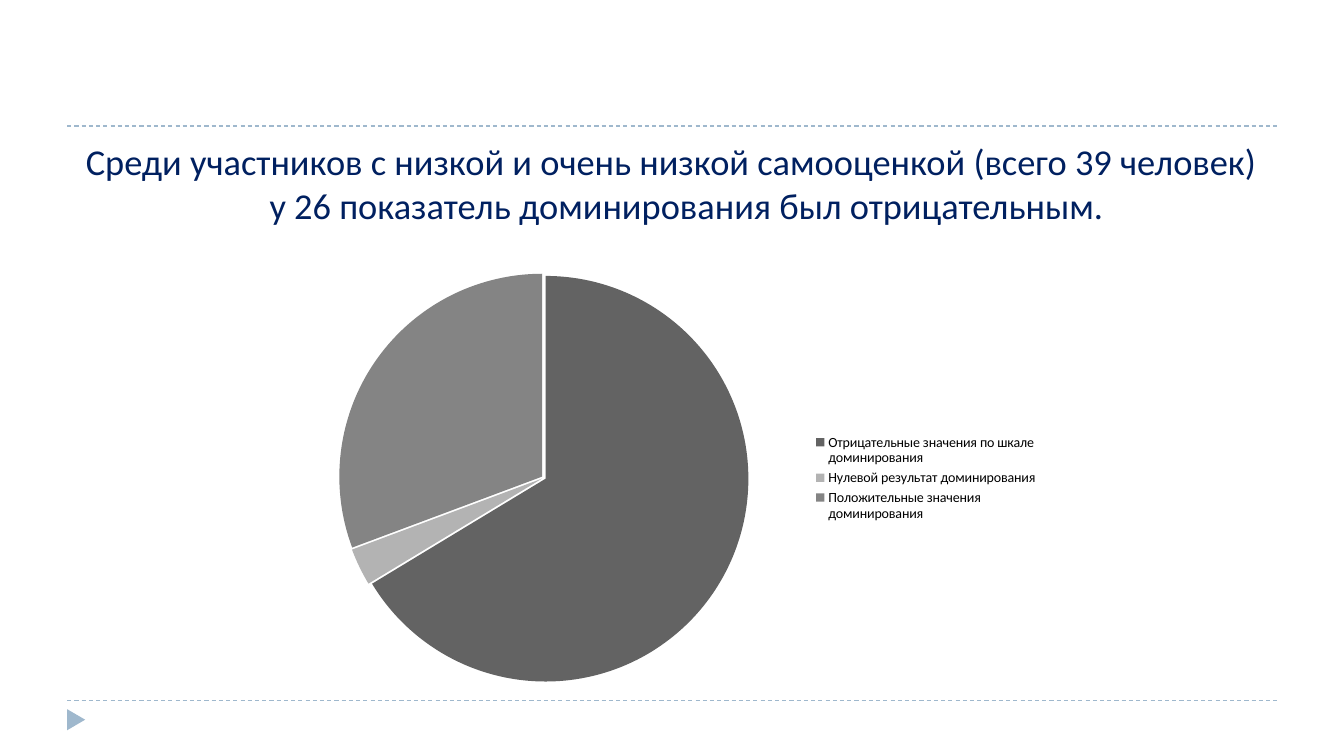
from dataclasses import dataclass

from lxml import etree
from pptx import Presentation
from pptx.chart.data import CategoryChartData
from pptx.dml.color import RGBColor
from pptx.enum.chart import XL_CHART_TYPE as ChartType, XL_LEGEND_POSITION as LegendPos
from pptx.enum.dml import MSO_LINE_DASH_STYLE as Dash
from pptx.enum.shapes import MSO_CONNECTOR as Connector, MSO_SHAPE as Shape
from pptx.enum.text import MSO_ANCHOR as Anchor, MSO_AUTO_SIZE as AutoSize, PP_ALIGN as Align
from pptx.oxml.ns import qn
from pptx.slide import Slide
from pptx.util import Pt

FONT = "Calibri"
ACCENT = "9FB8CD"
MARGIN, CONTENT_WIDTH = 48, 864
RULE_TOPS = (90, 500.4)
TITLE = ("Среди участников с низкой и очень низкой самооценкой (всего 39 человек) "
         "у 26 показатель доминирования был отрицательным.")


@dataclass
class Slice:
    label: str
    value: int
    color: str


SLICES = [
    Slice("Отрицательные значения по шкале доминирования", 67, "636363"),
    Slice("Нулевой результат доминирования", 3, "B3B3B3"),
    Slice("Положительные значения доминирования", 31, "848484"),
]


def rgb(value: str) -> RGBColor:
    return RGBColor.from_string(value)


def format_font(font, size: float, color: str) -> None:
    for name, value in {"name": FONT, "size": Pt(size), "bold": False}.items():
        setattr(font, name, value)
    font.color.rgb = rgb(color)


def add_rule(s: Slide, top: float) -> None:
    line = s.shapes.add_connector(Connector.STRAIGHT, Pt(MARGIN), Pt(top),
                                  Pt(MARGIN + CONTENT_WIDTH), Pt(top))
    line.line.color.rgb = rgb(ACCENT)
    line.line.width = Pt(0.75)
    line.line.dash_style = Dash.DASH
    etree.SubElement(line._element.spPr, qn("a:effectLst"))


def add_marker(s: Slide) -> None:
    sp = s.shapes.add_shape(Shape.ISOSCELES_TRIANGLE, Pt(46.8), Pt(507.6), Pt(15.12), Pt(12.96))
    sp.rotation = 90
    sp.shadow.inherit = False
    sp.fill.solid()
    sp.fill.fore_color.rgb = rgb(ACCENT)
    sp.line.fill.background()


def set_title(s: Slide) -> None:
    sp = s.shapes.title
    box = {"left": MARGIN, "top": 95.76, "width": CONTENT_WIDTH, "height": 80}
    for name, value in box.items():
        setattr(sp, name, Pt(value))
    tf = sp.text_frame
    frame = {"word_wrap": True, "auto_size": AutoSize.NONE, "vertical_anchor": Anchor.TOP}
    for name, value in frame.items():
        setattr(tf, name, value)
    p = tf.paragraphs[0]
    p.alignment = Align.CENTER
    pPr = p._p.get_or_add_pPr()
    pPr.set("marL", str(Pt(21.6)))
    pPr.set("indent", str(Pt(-21.6)))
    r = p.add_run()
    r.text = TITLE
    format_font(r.font, 26, "002060")


def add_pie(s: Slide) -> None:
    data = CategoryChartData()
    data.categories = [part.label for part in SLICES]
    data.add_series("Series 1", [part.value for part in SLICES])
    chart = s.shapes.add_chart(ChartType.PIE, Pt(197.28), Pt(185.04),
                               Pt(551.52), Pt(312.48), data).chart
    format_font(chart.font, 10, "000000")
    chart.has_title = False
    chart.has_legend = True
    chart.legend.position = LegendPos.RIGHT
    chart.legend.include_in_layout = False
    plot = chart.plots[0]
    plot.vary_by_categories = True
    series = plot.series[0]
    for i, part in enumerate(SLICES):
        fill = series.points[i].format.fill
        fill.solid()
        fill.fore_color.rgb = rgb(part.color)
    explosion = etree.Element(qn("c:explosion"), val="1")
    series._element.find(qn("c:dPt")).addprevious(explosion)


def main() -> None:
    prs = Presentation()
    prs.slide_width, prs.slide_height = Pt(960), Pt(540)
    s = prs.slides.add_slide(prs.slide_layouts[5])
    for top in RULE_TOPS:
        add_rule(s, top)
    add_marker(s)
    set_title(s)
    add_pie(s)
    prs.save("out.pptx")


if __name__ == "__main__":
    main()
